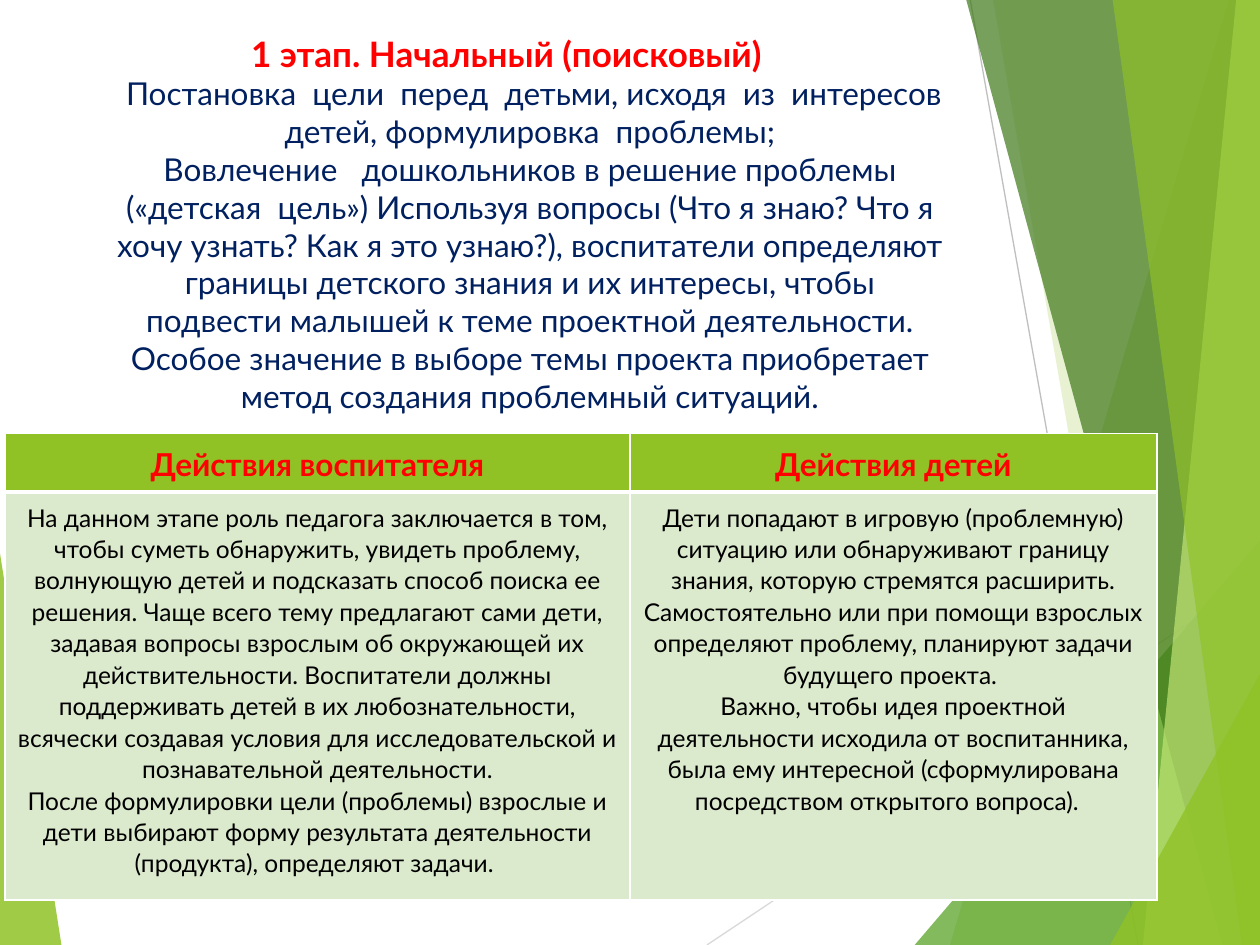
from dataclasses import dataclass

from lxml import etree
from pptx import Presentation
from pptx.dml.color import RGBColor
from pptx.enum.shapes import MSO_CONNECTOR
from pptx.enum.text import MSO_ANCHOR, PP_ALIGN
from pptx.oxml.ns import qn
from pptx.util import Cm, Pt

STRAIGHT = MSO_CONNECTOR.STRAIGHT
TOP = MSO_ANCHOR.TOP
CENTER = PP_ALIGN.CENTER
BLANK_LAYOUT = 6
WIDTH, HEIGHT = 25.4, 19.05  # centimetres, as all lengths below

Point = tuple[float, float]


@dataclass(frozen=True)
class Theme:
    font: str = "Lato"
    heading: str = "FF0000"
    intro: str = "002060"
    body: str = "000000"
    green: str = "90C226"
    leaf: str = "54A021"
    forest: str = "3F7819"
    lime: str = "C0E474"
    pale: str = "DBE9CD"
    border: str = "FFFFFF"
    light_line: str = "D9D9D9"
    dark_line: str = "BFBFBF"
    title_size: float = 20
    heading_size: float = 18
    body_size: float = 14
    hairline: float = 0.75
    thin: float = 1
    thick: float = 3


@dataclass(frozen=True)
class Facet:
    points: list[Point]
    color: str
    opacity: int


@dataclass(frozen=True)
class Ray:
    start: Point
    end: Point
    color: str


@dataclass(frozen=True)
class CellStyle:
    fill: str
    color: str
    size: float
    bold: bool
    top_border: float
    bottom_border: float


THEME = Theme()


def right_band(top_x: float, bottom_x: float) -> list[Point]:
    """Outline from a slanted left edge to the right edge of the slide."""
    return [(top_x, 0), (bottom_x, HEIGHT), (WIDTH, HEIGHT), (WIDTH, 0)]


def right_corner(bottom_x: float, right_y: float) -> list[Point]:
    """Triangle in the lower right corner of the slide."""
    return [(bottom_x, HEIGHT), (WIDTH, right_y), (WIDTH, HEIGHT)]


LEFT_FACET = Facet([(0, 11.15), (1.24, HEIGHT), (0, HEIGHT)], THEME.green, 85)
RAYS = [
    Ray((14.25, HEIGHT), (WIDTH, 11.61), THEME.light_line),
    Ray((19.56, 0), (22.94, HEIGHT), THEME.dark_line),
]
RIGHT_FACETS = [
    Facet(right_band(24.77, 19.15), THEME.green, 30),
    Facet(right_band(20.02, 23.34), THEME.green, 20),
    Facet(right_corner(18.44, 10.9), THEME.leaf, 72),
    Facet(right_band(19.48, 24.64), THEME.forest, 70),
    Facet(right_band(24.92, 23.04), THEME.lime, 70),
    Facet(right_band(22.43, 25.04), THEME.green, 65),
    Facet(right_corner(22.38, 13.59), THEME.green, 80),
]

TITLE = "1 этап. Начальный (поисковый)"
INTRO = [
    " Постановка  цели  перед  детьми, исходя  из  интересов детей, "
    "формулировка  проблемы;",
    "Вовлечение   дошкольников в решение проблемы («детская  цель») "
    "Используя вопросы (Что я знаю? Что я хочу узнать? Как я это узнаю?), "
    "воспитатели определяют границы детского знания и их интересы, чтобы "
    "подвести малышей к теме проектной деятельности. Особое значение в выборе "
    "темы проекта приобретает метод создания проблемный ситуаций.",
]

COLUMN_WIDTHS = [12.6, 10.62]
ROW_HEIGHTS = [1.02, 8.23]
ROW_STYLES = [
    CellStyle(THEME.green, THEME.heading, THEME.heading_size, True,
              THEME.thin, THEME.thick),
    CellStyle(THEME.pale, THEME.body, THEME.body_size, False,
              THEME.thick, THEME.thin),
]
TABLE_TEXT = [
    [["Действия воспитателя"], ["Действия детей"]],
    [
        [
            "На данном этапе роль педагога заключается в том, чтобы суметь "
            "обнаружить, увидеть проблему, волнующую детей и подсказать способ "
            "поиска ее решения. Чаще всего тему предлагают сами дети, задавая "
            "вопросы взрослым об окружающей их действительности. Воспитатели "
            "должны поддерживать детей в их любознательности, всячески создавая "
            "условия для исследовательской и познавательной деятельности.",
            "После формулировки цели (проблемы) взрослые и дети выбирают форму "
            "результата деятельности (продукта), определяют задачи. ",
        ],
        [
            "Дети попадают в игровую (проблемную) ситуацию или обнаруживают "
            "границу знания, которую стремятся расширить. Самостоятельно или при "
            "помощи взрослых определяют проблему, планируют задачи будущего "
            "проекта. ",
            "Важно, чтобы идея проектной деятельности исходила от воспитанника, "
            "была ему интересной (сформулирована посредством открытого "
            "вопроса).  ",
        ],
    ],
]


def add_text(paragraph, text: str, *, size: float, color: str,
             bold: bool = False) -> None:
    run = paragraph.add_run()
    run.text = text
    run.font.name = THEME.font
    run.font.size = Pt(size)
    run.font.bold = bold
    run.font.color.rgb = RGBColor.from_string(color)


def draw_facet(slide, facet: Facet) -> None:
    points = [(Cm(x), Cm(y)) for x, y in facet.points]
    builder = slide.shapes.build_freeform(*points[0])
    builder.add_line_segments(points[1:], close=True)
    shape = builder.convert_to_shape()
    shape.shadow.inherit = False
    shape.line.fill.background()
    shape.fill.solid()
    shape.fill.fore_color.rgb = RGBColor.from_string(facet.color)
    color = shape.element.spPr.find(qn("a:solidFill")).find(qn("a:srgbClr"))
    etree.SubElement(color, qn("a:alpha"), val=str(facet.opacity * 1000))


def draw_ray(slide, ray: Ray) -> None:
    ends = [Cm(value) for value in (*ray.start, *ray.end)]
    connector = slide.shapes.add_connector(STRAIGHT, *ends)
    connector.line.color.rgb = RGBColor.from_string(ray.color)
    connector.line.width = Pt(THEME.hairline)
    etree.SubElement(connector.element.spPr, qn("a:effectLst"))


def draw_title(slide) -> None:
    box = slide.shapes.add_textbox(Cm(1.09), Cm(0.53), Cm(18.24), Cm(4.42))
    frame = box.text_frame
    frame.word_wrap = True
    frame.vertical_anchor = TOP
    paragraph = frame.paragraphs[0]
    paragraph.alignment = CENTER
    properties = paragraph._p.get_or_add_pPr()
    properties.set("marL", str(Cm(0.95)))
    properties.set("indent", str(Cm(-0.95)))
    add_text(paragraph, TITLE, size=THEME.title_size, color=THEME.heading, bold=True)
    for text in INTRO:
        paragraph.add_line_break()
        add_text(paragraph, text, size=THEME.heading_size, color=THEME.intro)


def set_borders(cell, style: CellStyle) -> None:
    properties = cell._tc.get_or_add_tcPr()
    widths = {"a:lnL": THEME.thin, "a:lnR": THEME.thin,
              "a:lnT": style.top_border, "a:lnB": style.bottom_border}
    for position, (tag, width) in enumerate(widths.items()):
        line = etree.Element(qn(tag), w=str(Pt(width)))
        fill = etree.SubElement(line, qn("a:solidFill"))
        etree.SubElement(fill, qn("a:srgbClr"), val=THEME.border)
        properties.insert(position, line)


def fill_cell(cell, texts: list[str], style: CellStyle) -> None:
    cell.margin_left = cell.margin_right = Cm(0.18)
    cell.margin_top = cell.margin_bottom = Cm(0.18)
    cell.fill.solid()
    cell.fill.fore_color.rgb = RGBColor.from_string(style.fill)
    set_borders(cell, style)
    frame = cell.text_frame
    for index, text in enumerate(texts):
        paragraph = frame.add_paragraph() if index else frame.paragraphs[0]
        paragraph.alignment = CENTER
        paragraph.line_spacing = 1.07
        add_text(paragraph, text, size=style.size, color=style.color, bold=style.bold)


def draw_table(slide) -> None:
    table = slide.shapes.add_table(
        len(ROW_HEIGHTS), len(COLUMN_WIDTHS), Cm(0.1), Cm(8.74),
        Cm(sum(COLUMN_WIDTHS)), Cm(sum(ROW_HEIGHTS))).table
    table.first_row = table.horz_banding = False
    for column, width in zip(table.columns, COLUMN_WIDTHS):
        column.width = Cm(width)
    for row, height, style, cell_texts in zip(
            table.rows, ROW_HEIGHTS, ROW_STYLES, TABLE_TEXT):
        row.height = Cm(height)
        for cell, texts in zip(row.cells, cell_texts):
            fill_cell(cell, texts, style)


def main() -> None:
    presentation = Presentation()
    presentation.slide_width, presentation.slide_height = Cm(WIDTH), Cm(HEIGHT)
    slide = presentation.slides.add_slide(presentation.slide_layouts[BLANK_LAYOUT])
    draw_facet(slide, LEFT_FACET)
    for ray in RAYS:
        draw_ray(slide, ray)
    for facet in RIGHT_FACETS:
        draw_facet(slide, facet)
    draw_title(slide)
    draw_table(slide)
    presentation.save("out.pptx")


if __name__ == "__main__":
    main()
